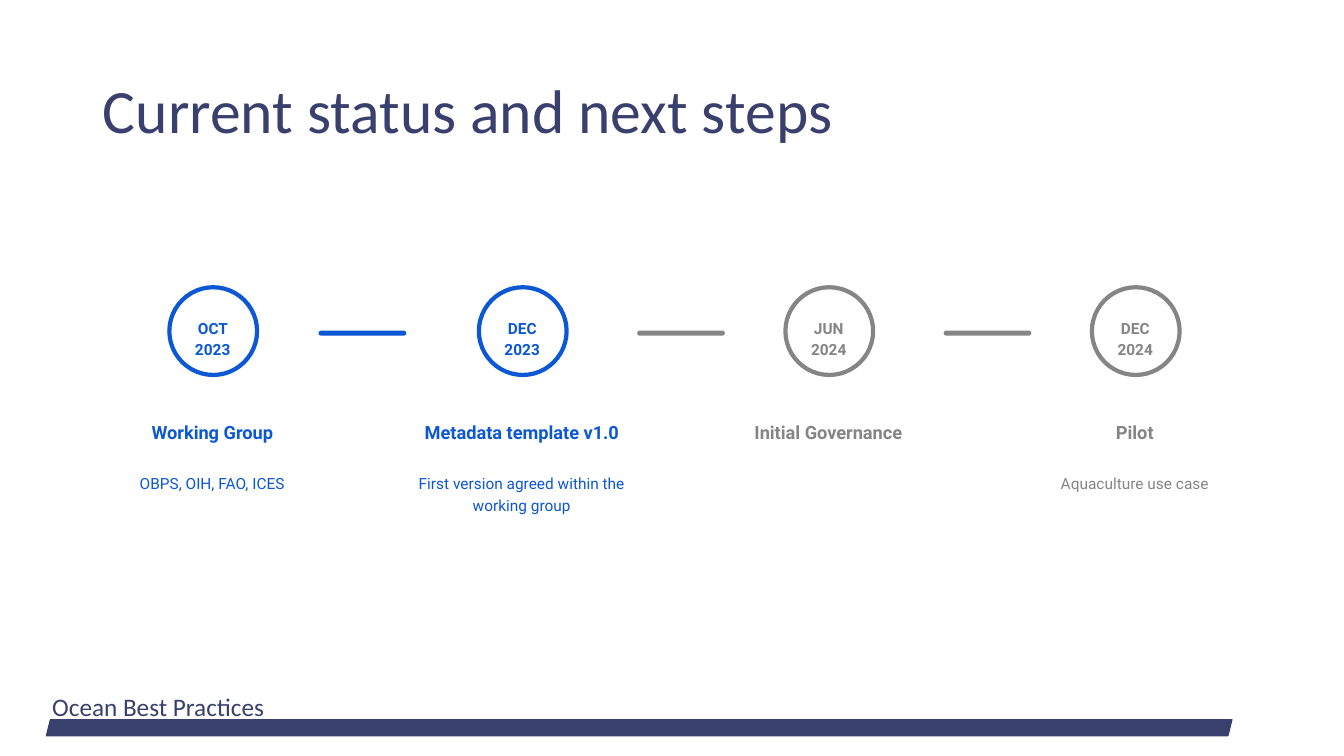
import pptx
import pptx.util
import pptx.dml.color
import pptx.enum.shapes
import pptx.enum.text

SCALE = 9144  # EMU per px, 100 px to the inch
COLORS = {"navy": "39406E", "done": "0C57D3", "next": "858585"}
KINDS = pptx.enum.shapes.MSO_SHAPE
ALIGN = pptx.enum.text.PP_ALIGN
ANCHOR = pptx.enum.text.MSO_ANCHOR

# centre, state, date, heading, detail
STEPS = [
    (211, "done", "OCT 2023", "Working Group", "OBPS, OIH, FAO, ICES"),
    (518, "done", "DEC 2023", "Metadata template v1.0",
     "First version agreed within the working group"),
    (822, "next", "JUN 2024", "Initial Governance", ""),
    (1126, "next", "DEC 2024", "Pilot", "Aquaculture use case"),
]
BARS = [(316, "done"), (632, "next"), (936, "next")]


def px(*sizes):
    return [pptx.util.Emu(size * SCALE) for size in sizes]


def paint(color, name):
    color.rgb = pptx.dml.color.RGBColor.from_string(COLORS[name])


def add_form(slide, kind, box, fill=None, line=None, width=1, bend=None):
    form = slide.shapes.add_shape(kind, *px(*box))
    form.shadow.inherit = False
    if bend is not None:
        form.adjustments[0] = bend
    if fill:
        form.fill.solid()
        paint(form.fill.fore_color, fill)
    else:
        form.fill.background()
    if line:
        paint(form.line.color, line)
        form.line.width = pptx.util.Pt(width)
    else:
        form.line.fill.background()


def write(frame, text, font, size, color, bold=False, align=ALIGN.LEFT, space=1.0):
    """Fill a text frame with one styled run."""
    frame.word_wrap = True
    frame.auto_size = pptx.enum.text.MSO_AUTO_SIZE.NONE
    para = frame.paragraphs[0]
    para.alignment = align
    para.line_spacing = space
    run = para.add_run()
    run.text = text
    run.font.name = font
    run.font.size = pptx.util.Pt(size)
    run.font.bold = bold
    paint(run.font.color, color)


def add_label(slide, box, text, size, color, bold=False, anchor=ANCHOR.TOP):
    frame = slide.shapes.add_textbox(*px(*box)).text_frame
    (frame.margin_left, frame.margin_top,
     frame.margin_right, frame.margin_bottom) = px(13, 13, 13, 13)
    frame.vertical_anchor = anchor
    write(frame, text, "Roboto", size, color, bold, ALIGN.CENTER, 1.15)


def add_step(slide, mid, state, date, head, detail):
    add_form(slide, KINDS.OVAL, (mid - 43, 285, 87, 87), line=state, width=3)
    add_label(slide, (mid - 32, 301, 64, 47), date, 11, state, True)
    add_label(slide, (mid - 125, 388, 249, 65), head, 13, state, True, ANCHOR.BOTTOM)
    if detail:
        add_label(slide, (mid - 125, 455, 249, 108), detail, 11, state)


def add_title(slide, text):
    title = slide.shapes.title
    title.left, title.top, title.width, title.height = px(92, 40, 1150, 145)
    title.text_frame.vertical_anchor = ANCHOR.MIDDLE
    write(title.text_frame, text, "Calibri", 44, "navy", space=0.9)


def add_footer(slide, text):
    add_form(slide, KINDS.PARALLELOGRAM, (46, 714, 1176, 16),
             "navy", "navy", 0.75, 0.25)
    add_form(slide, KINDS.RECTANGLE, (823, 715, 284, 13), "navy", "navy", 2)
    box = slide.shapes.add_textbox(*px(42, 681, 233, 40))
    write(box.text_frame, text, "Calibri", 18, "navy")


def main():
    deck = pptx.Presentation()
    deck.slide_width, deck.slide_height = px(1333, 750)
    slide = deck.slides.add_slide(deck.slide_layouts[5])
    add_footer(slide, "Ocean Best Practices")
    add_title(slide, "Current status and next steps")
    for step in STEPS:
        add_step(slide, *step)
    for left, state in BARS:
        add_form(slide, KINDS.ROUNDED_RECTANGLE, (left, 328, 87, 5), state, bend=0.5)
    deck.save("out.pptx")


if __name__ == "__main__":
    main()
